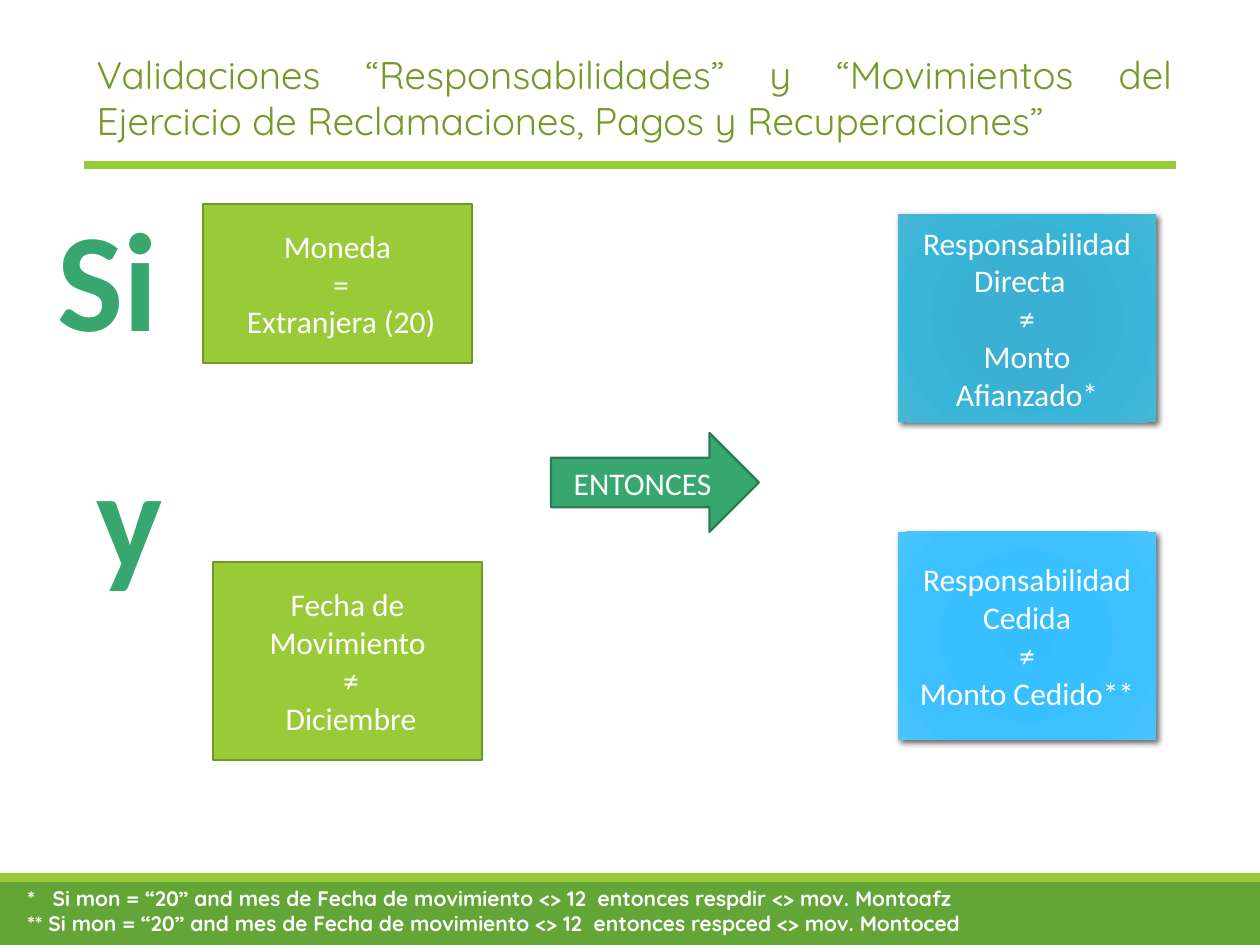
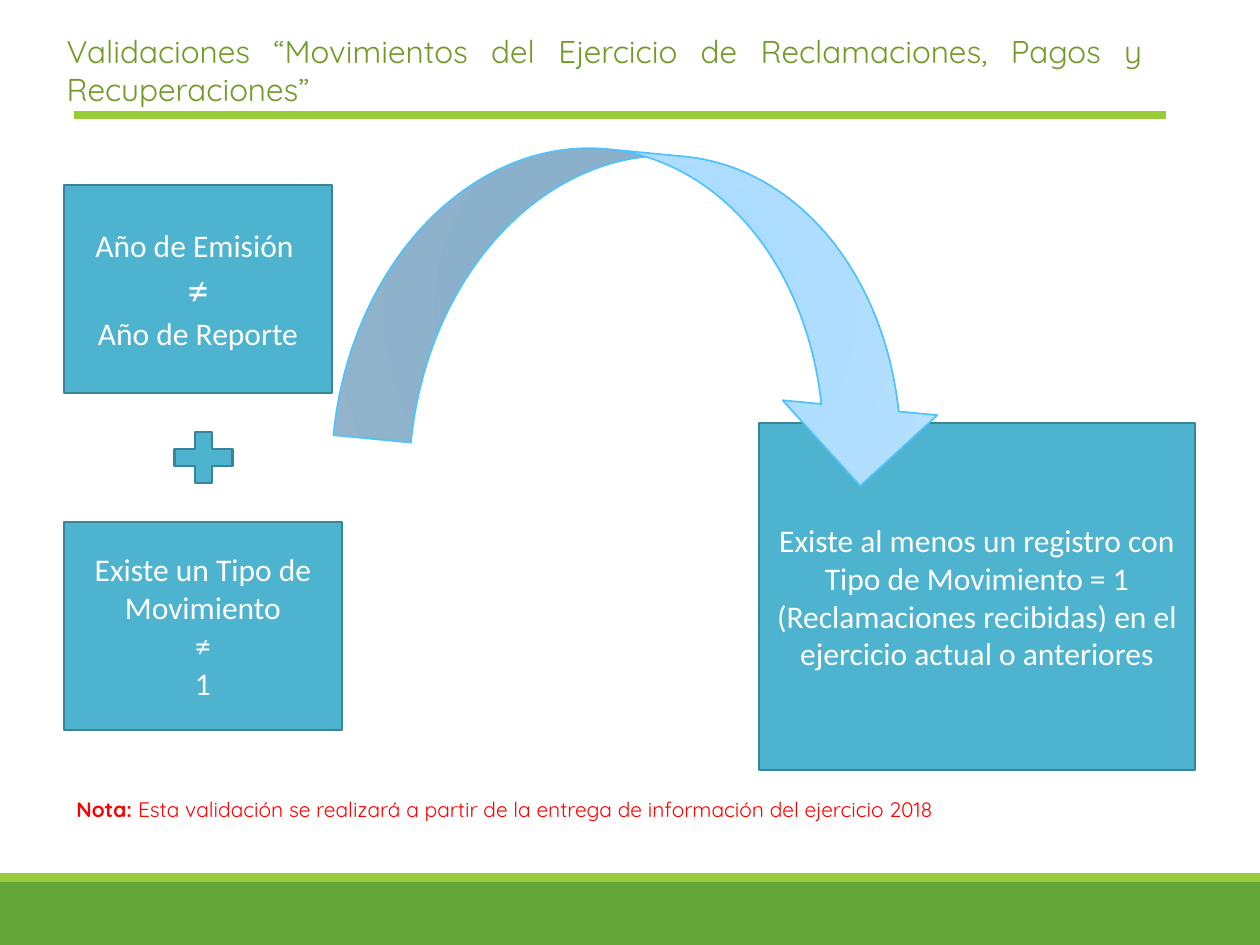
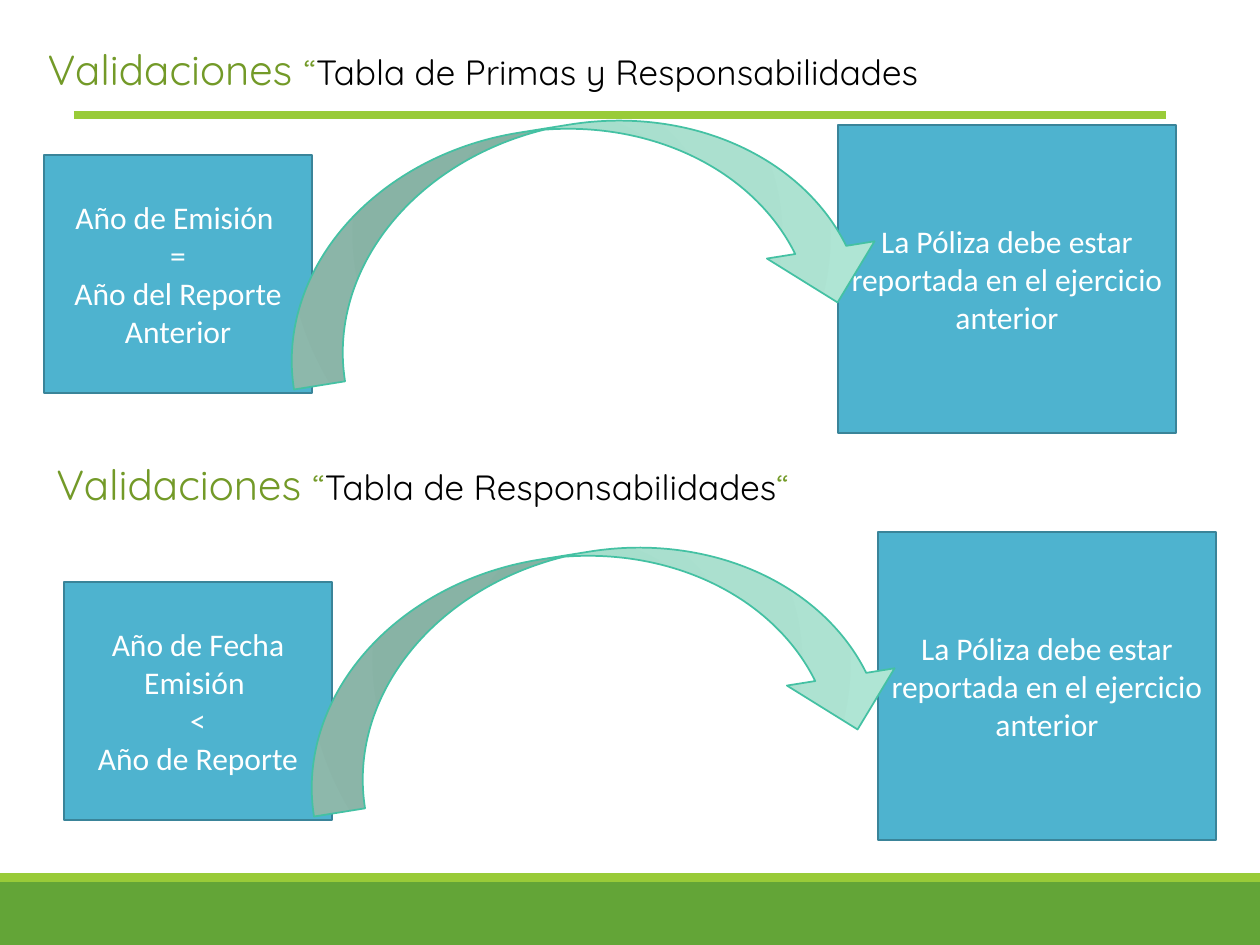
import pptx
import pptx.dml.color
import pptx.enum.shapes
import pptx.enum.text
import pptx.oxml.ns
import pptx.util
from lxml import etree

EMU_PER_PX = 914400 / 126
WIDTH, HEIGHT = 1260, 945
BODY_FONT, TITLE_FONT = "Calibri", "Quicksand"
WHITE, BLACK, RED = "FFFFFF", "000000", "FF0000"
LIME, LIME_EDGE, LEAF, OLIVE = "99CB38", "719629", "63A537", "739A28"
GREEN, GREEN_EDGE = "37A76F", "297C52"
TEAL, TEAL_EDGE = "4EB3CF", "3A8499"
DIRECT_STOPS = [(0, "37B1D3"), (34, "3AB1D2"), (70, "38B5D8"), (100, "48B7D5")]
CEDED_STOPS = [(0, "34BEFF"), (34, "38BFFE"), (70, "3CC0FF"), (100, "4BC5FF")]
SKY_STOPS = [(0, "99D5FE"), (45, "AEDDFF"), (100, "B8E1FF")]
MINT_STOPS = [(0, "9AD9C5"), (45, "ABE0CF"), (100, "B1E7D6")]
SHAPES = pptx.enum.shapes.MSO_SHAPE
ALIGN = pptx.enum.text.PP_ALIGN
ANCHOR = pptx.enum.text.MSO_ANCHOR
AUTO_SIZE = pptx.enum.text.MSO_AUTO_SIZE


def px(length):
    """Turn pixels into EMU."""
    return pptx.util.Emu(round(length * EMU_PER_PX))


def rgb(value):
    """Turn a hex string into a colour."""
    return pptx.dml.color.RGBColor.from_string(value)


def add_element(parent, tag, **attributes):
    """Append a DrawingML element with the given attributes."""
    values = {name: str(value) for name, value in attributes.items()}
    return etree.SubElement(parent, pptx.oxml.ns.qn(tag), values)


def write(text_frame, paragraphs, alignment=ALIGN.CENTER, **base):
    """Fill a text frame; each paragraph is a string or a list of (text, style) runs."""
    for index, content in enumerate(paragraphs):
        paragraph = text_frame.add_paragraph() if index else text_frame.paragraphs[0]
        paragraph.alignment = alignment
        runs = [(content, {})] if isinstance(content, str) else content
        for text, changes in runs:
            style = {"size": 18, "color": WHITE, "font": BODY_FONT, "bold": False, **base, **changes}
            run = paragraph.add_run()
            run.text = text
            run.font.size = pptx.util.Pt(style["size"])
            run.font.name = style["font"]
            run.font.bold = style["bold"]
            run.font.color.rgb = rgb(style["color"])


def fill_radial(shape, stops):
    """Give a shape a circular gradient."""
    shape.fill.solid()
    properties = shape.element.spPr
    solid = properties.find(pptx.oxml.ns.qn("a:solidFill"))
    gradient = add_element(properties, "a:gradFill", rotWithShape=1)
    stop_list = add_element(gradient, "a:gsLst")
    for position, color in stops:
        stop = add_element(stop_list, "a:gs", pos=position * 1000)
        add_element(stop, "a:srgbClr", val=color)
    circle = add_element(gradient, "a:path", path="circle")
    add_element(circle, "a:fillToRect", l=100000, t=100000, r=100000, b=100000)
    properties.replace(solid, gradient)


def add_shape(slide, kind, box, fill, edge=None, edge_width=1.25, paragraphs=()):
    """Add a preset shape with a plain or gradient fill and centred text."""
    shape = slide.shapes.add_shape(kind, *map(px, box))
    shape.shadow.inherit = False
    if isinstance(fill, str):
        shape.fill.solid()
        shape.fill.fore_color.rgb = rgb(fill)
    else:
        fill_radial(shape, fill)
    if edge:
        shape.line.color.rgb = rgb(edge)
        shape.line.width = pptx.util.Pt(edge_width)
    else:
        shape.line.fill.background()
    write(shape.text_frame, paragraphs)
    return shape


def add_process(slide, box, paragraphs, fill=TEAL, edge=TEAL_EDGE):
    """Add a process box that holds a condition or a result."""
    return add_shape(slide, SHAPES.FLOWCHART_PROCESS, box, fill, edge, paragraphs=paragraphs)


def add_result(slide, box, paragraphs, stops):
    """Add a gradient process box with a drop shadow."""
    shape = add_process(slide, box, paragraphs, stops, None)
    effects = shape.element.spPr.find(pptx.oxml.ns.qn("a:effectLst"))
    shadow = add_element(effects, "a:outerShdw", blurRad=pptx.util.Pt(3.5),
                         dist=pptx.util.Pt(2), dir=45 * 60000, rotWithShape=0)
    add_element(add_element(shadow, "a:srgbClr", val=BLACK), "a:alpha", val=60000)


def add_text(slide, box, paragraphs, alignment=ALIGN.LEFT, wrap=True, **style):
    """Add a text box."""
    text_box = slide.shapes.add_textbox(*map(px, box))
    text_box.text_frame.word_wrap = wrap
    text_box.text_frame.auto_size = AUTO_SIZE.SHAPE_TO_FIT_TEXT
    write(text_box.text_frame, paragraphs, alignment, **style)
    return text_box


def add_curved_arrow(slide, box, rotation, stops, edge):
    """Add a tilted curved arrow."""
    arrow = add_shape(slide, SHAPES.CURVED_DOWN_ARROW, box, stops, edge, 1)
    arrow.rotation = rotation
    return arrow


def add_bands(slide):
    """Build the footer bands and move them to the slide master."""
    master = slide.slide_layout.slide_master
    bands = [((0, 882, WIDTH, 63), LEAF), ((0, 873, WIDTH, 9), LIME)]
    for identifier, (box, color) in enumerate(bands, 101):
        band = add_shape(slide, SHAPES.RECTANGLE, box, color)
        band.element.nvSpPr.cNvPr.set("id", str(identifier))
        master.shapes.element.append(band.element)


def add_titled_slide(presentation, box, runs, size, rule_left, rule_top):
    """Add a slide with its title and the rule below it."""
    slide = presentation.slides.add_slide(presentation.slide_layouts[5])
    title = slide.shapes.title
    title.left, title.top, title.width, title.height = map(px, box)
    title.text_frame.vertical_anchor = ANCHOR.TOP
    title.text_frame.word_wrap = True
    title.text_frame.auto_size = AUTO_SIZE.SHAPE_TO_FIT_TEXT
    write(title.text_frame, [runs], ALIGN.JUSTIFY, size=size, color=OLIVE, font=TITLE_FONT)
    rule = slide.shapes.add_connector(
        pptx.enum.shapes.MSO_CONNECTOR.STRAIGHT,
        px(rule_left), px(rule_top), px(rule_left + 1092), px(rule_top))
    rule.line.color.rgb = rgb(LIME)
    rule.line.width = pptx.util.Pt(4.5)
    add_element(rule.element.spPr, "a:effectLst")
    return slide


def add_condition(slide, left, top):
    """Add the two conditions and the words that join them."""
    words = [("Si", (-159, -19, 127, 183)), ("y", (-119, 219, 92, 183))]
    for word, (dx, dy, width, height) in words:
        add_text(slide, (left + dx, top + dy, width, height), [word],
                 ALIGN.CENTER, False, size=80, color=GREEN, bold=True)
    add_process(slide, (left, top, 269, 159),
                ["Moneda", " =", " Extranjera (20)"], LIME, LIME_EDGE)
    add_process(slide, (left + 10, top + 358, 269, 198),
                ["Fecha de Movimiento", " ≠", " Diciembre"], LIME, LIME_EDGE)


def add_results(slide, left, top):
    """Stack the two results."""
    results = [(["Responsabilidad Directa  ", "≠", "Monto Afianzado*"], DIRECT_STOPS),
               (["Responsabilidad Cedida", "≠", "Monto Cedido**"], CEDED_STOPS)]
    for row, (paragraphs, stops) in enumerate(results):
        add_result(slide, (left, top + 318 * row, 258, 208), paragraphs, stops)


def build_responsibilities(presentation):
    """Build the slide on responsibilities and movements."""
    title = ("Validaciones “Responsabilidades” y “Movimientos del Ejercicio de "
             "Reclamaciones, Pagos y Recuperaciones”")
    slide = add_titled_slide(presentation, (84, 45, 1101, 106), title, 22, 84, 165)
    add_bands(slide)
    add_condition(slide, 203, 204)
    add_shape(slide, SHAPES.RIGHT_ARROW, (551, 433, 208, 99), GREEN, GREEN_EDGE,
              paragraphs=["ENTONCES"])
    add_results(slide, 898, 214)
    add_text(slide, (15, 879, 1150, 89), [
        "*   Si mon = “20” and mes de Fecha de movimiento <> 12  entonces respdir <> mov. Montoafz",
        "** Si mon = “20” and mes de Fecha de movimiento <> 12  entonces respced <> mov. Montoced",
    ], size=12, font=TITLE_FONT, bold=True)


def add_sum(slide, left, top):
    """Add two conditions with a plus sign between them."""
    add_process(slide, (left, top, 268, 208),
                ["Año de Emisión ", [("≠", {"size": 24})], "Año de Reporte"])
    add_process(slide, (left, top + 337, 278, 208),
                ["Existe un Tipo de", "Movimiento", "≠", "1"])
    add_shape(slide, SHAPES.MATH_PLUS, (left + 100, top + 238, 79, 69), TEAL, TEAL_EDGE)


def build_movements(presentation):
    """Build the slide on movements of the period."""
    title = "Validaciones “Movimientos del Ejercicio de Reclamaciones, Pagos y Recuperaciones”"
    slide = add_titled_slide(presentation, (54, 26, 1101, 89), title, 18, 74, 115)
    add_sum(slide, 64, 185)
    add_process(slide, (759, 423, 436, 347), [
        "Existe al menos un registro con Tipo de Movimiento = 1 "
        "(Reclamaciones recibidas) en el ejercicio actual o anteriores"])
    add_curved_arrow(slide, (347, 154, 607, 311), 5.5, SKY_STOPS, "51C3F9")
    note = add_text(slide, (64, 790, 1142, 38), [[
        ("Nota: ", {"bold": True}),
        ("Esta validación se realizará a partir de la entrega de información del ejercicio 2018", {}),
    ]], size=12, color=RED, font=TITLE_FONT)
    properties = note.text_frame.paragraphs[0]._p.get_or_add_pPr()
    properties.set("marL", str(px(60)))
    properties.set("indent", str(-px(60)))


def add_validation(slide, left, top, condition, result_left, result_top):
    """Link a condition to the result that it demands."""
    add_process(slide, (left, top, 268, 238), condition)
    add_process(slide, (result_left, result_top, 338, 308),
                ["La Póliza debe estar reportada en el ejercicio anterior"])
    arrow = add_curved_arrow(slide, (left + 229, top - 30, 605, 218), 350.9, MINT_STOPS, "44C1A3")
    arrow.adjustments[0] = 0.237


def heading_runs(table_name):
    """Return the runs that open a heading on a table."""
    return [("Validaciones ", {"size": 24}), ("“", {}), (table_name, {"color": BLACK})]


def build_tables(presentation):
    """Build the slide on the premium and responsibility tables."""
    slide = add_titled_slide(presentation, (35, 37, 1101, 106),
                             heading_runs("Tabla de Primas y Responsabilidades"), 20, 74, 115)
    add_validation(slide, 44, 155, ["Año de Emisión ", "=", "Año del Reporte Anterior"], 838, 125)
    add_validation(slide, 64, 582, ["Año de Fecha Emisión ", "<", "Año de Reporte"], 878, 532)
    add_text(slide, (44, 452, 1101, 63),
             [heading_runs("Tabla de Responsabilidades") + [("“", {})]],
             ALIGN.JUSTIFY, size=20, color=OLIVE, font=TITLE_FONT)


def main():
    """Build and save the presentation."""
    presentation = pptx.Presentation()
    presentation.slide_width, presentation.slide_height = px(WIDTH), px(HEIGHT)
    build_responsibilities(presentation)
    build_movements(presentation)
    build_tables(presentation)
    presentation.save("out.pptx")


if __name__ == "__main__":
    main()
